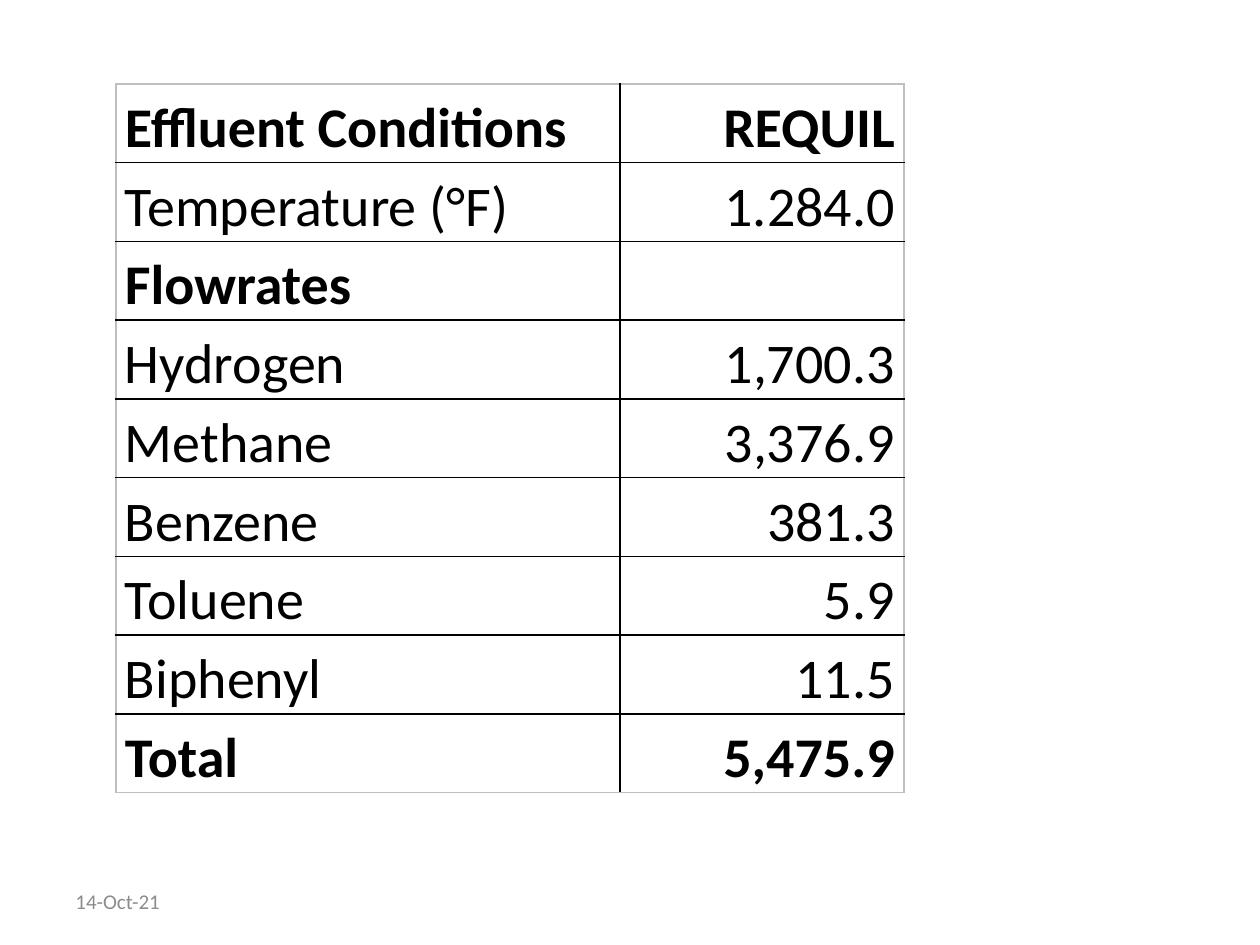
from typing import NamedTuple

from lxml import etree
from pptx import Presentation
from pptx.dml.color import RGBColor
from pptx.enum.text import MSO_ANCHOR, PP_ALIGN
from pptx.oxml.ns import qn
from pptx.util import Pt

EMU_PER_PX = 914400 // 126
MIDDLE = MSO_ANCHOR.MIDDLE
LEFT, RIGHT = PP_ALIGN.LEFT, PP_ALIGN.RIGHT
FONT = "Calibri"
BLACK, WHITE, GRAY, OUTLINE = "000000", "FFFFFF", "8C8C8C", "BFBFBF"
BLANK_LAYOUT = 6
TABLE_LEFT, TABLE_TOP, ROW_HEIGHT = 116, 84, 77
COLUMN_WIDTHS = (504, 284)


class Condition(NamedTuple):
    label: str
    value: str
    bold: bool = False


CONDITIONS = [
    Condition("Effluent Conditions", "REQUIL", True),
    Condition("Temperature (°F)", "1.284.0"),
    Condition("Flowrates", "", True),
    Condition("Hydrogen", "1,700.3"),
    Condition("Methane", "3,376.9"),
    Condition("Benzene", "381.3"),
    Condition("Toluene", "5.9"),
    Condition("Biphenyl", "11.5"),
    Condition("Total", "5,475.9", True),
]


def px(length: int) -> int:
    return length * EMU_PER_PX


def rgb(color: str) -> RGBColor:
    return RGBColor.from_string(color)


def format_text(paragraph, size: int, color: str, bold: bool = False) -> None:
    for font in [paragraph.font, *(run.font for run in paragraph.runs)]:
        font.name = FONT
        font.size = Pt(size)
        font.bold = bold
        font.color.rgb = rgb(color)


def set_borders(cell, colors: dict[str, str]) -> None:
    properties = cell._tc.get_or_add_tcPr()
    for position, (side, color) in enumerate(colors.items()):
        line = etree.Element(qn(f"a:{side}"), w=str(Pt(1)))
        fill = etree.SubElement(line, qn("a:solidFill"))
        etree.SubElement(fill, qn("a:srgbClr"), val=color)
        properties.insert(position, line)


def fill_cell(cell, text: str, bold: bool, alignment) -> None:
    cell.margin_left = cell.margin_right = px(9)
    cell.margin_top = cell.margin_bottom = 0
    cell.fill.solid()
    cell.fill.fore_color.rgb = rgb(WHITE)
    cell.text_frame.text = text
    paragraph = cell.text_frame.paragraphs[0]
    paragraph.alignment = alignment
    paragraph.line_spacing = 1.15
    format_text(paragraph, 32, BLACK, bold)


def add_conditions_table(slide, conditions: list[Condition]) -> None:
    table = slide.shapes.add_table(
        len(conditions), len(COLUMN_WIDTHS), px(TABLE_LEFT), px(TABLE_TOP),
        px(sum(COLUMN_WIDTHS)), px(ROW_HEIGHT * len(conditions)),
    ).table
    table.first_row = table.horz_banding = False
    for column, width in zip(table.columns, COLUMN_WIDTHS):
        column.width = px(width)
    last_row, last_column = len(conditions) - 1, len(COLUMN_WIDTHS) - 1
    for row, condition in enumerate(conditions):
        table.rows[row].height = px(ROW_HEIGHT)
        entries = ((condition.label, LEFT), (condition.value, RIGHT))
        for column, (text, alignment) in enumerate(entries):
            cell = table.cell(row, column)
            fill_cell(cell, text, condition.bold, alignment)
            set_borders(cell, {
                "lnL": OUTLINE if column == 0 else BLACK,
                "lnR": OUTLINE if column == last_column else BLACK,
                "lnT": OUTLINE if row == 0 else BLACK,
                "lnB": OUTLINE if row == last_row else BLACK,
            })


def add_date(slide, date: str) -> None:
    frame = slide.shapes.add_textbox(px(63), px(876), px(294), px(50)).text_frame
    frame.word_wrap = True
    frame.vertical_anchor = MIDDLE
    frame.text = date
    format_text(frame.paragraphs[0], 12, GRAY)


def main() -> None:
    presentation = Presentation()
    presentation.slide_width = px(1260)
    presentation.slide_height = px(945)
    slide = presentation.slides.add_slide(presentation.slide_layouts[BLANK_LAYOUT])
    add_conditions_table(slide, CONDITIONS)
    add_date(slide, "14-Oct-21")
    presentation.save("out.pptx")


if __name__ == "__main__":
    main()
